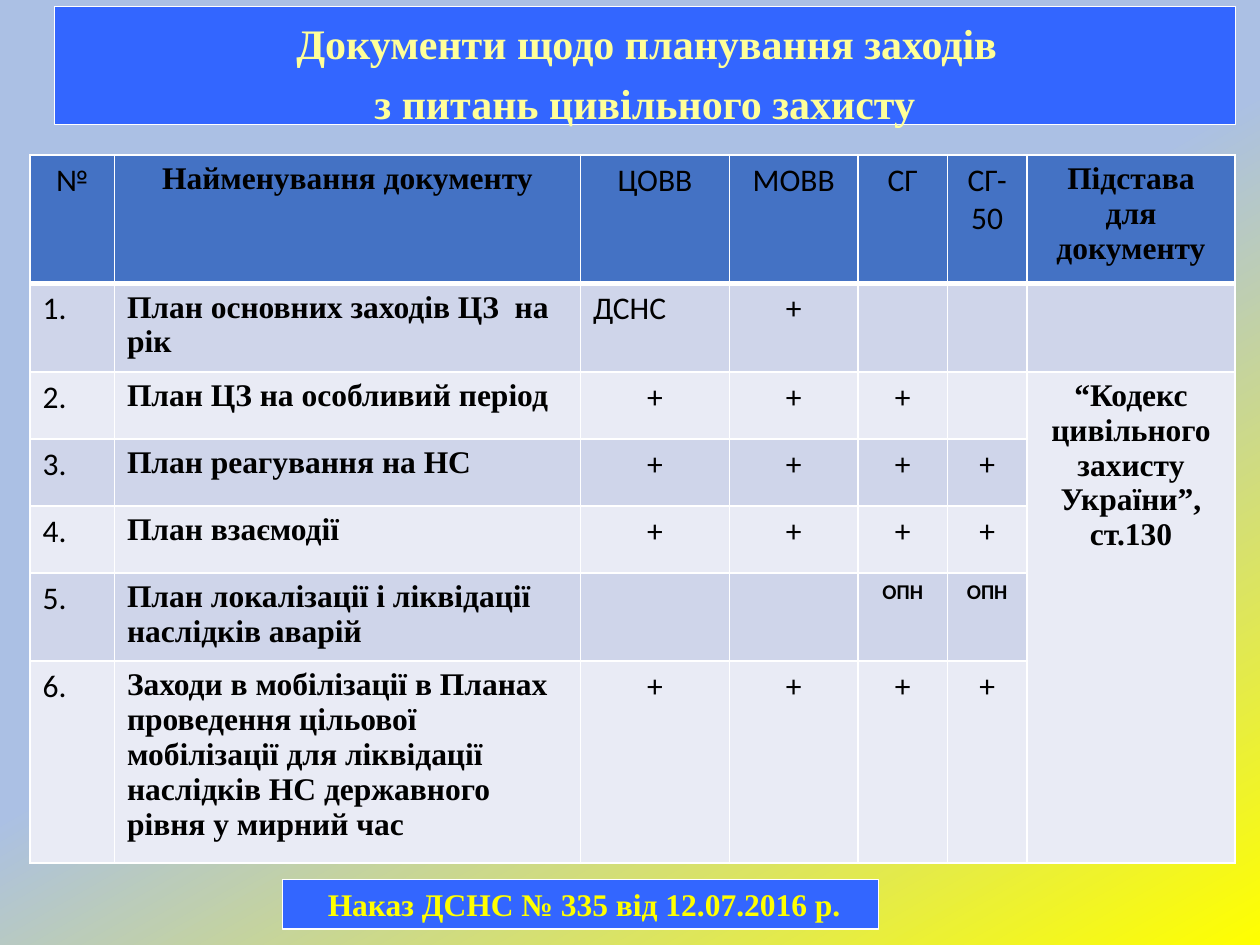
from copy import deepcopy
from dataclasses import dataclass

from lxml import etree
from pptx import Presentation
from pptx.dml.color import RGBColor
from pptx.enum import shapes, text
from pptx.oxml import ns
from pptx.util import Pt


@dataclass(frozen=True)
class Theme:
    sky: str = "ABC0E4"
    yellow: str = "FFFF00"
    banner: str = "3366FF"
    title: str = "FFFF99"
    white: str = "FFFFFF"
    black: str = "000000"
    header: str = "4472C4"
    bands: tuple = ("CFD5EA", "E9EBF5")
    serif: str = "Times New Roman"
    sans: str = "Calibri"
    title_size: int = 24
    title_lead: int = 32
    body: int = 18
    small: int = 12


THEME = Theme()
CENTER, LEFT = text.PP_ALIGN.CENTER, text.PP_ALIGN.LEFT


class Deck:
    def __init__(self, theme, width, height):
        self.theme = theme
        self.prs = Presentation()
        self.prs.slide_width, self.prs.slide_height = Pt(width), Pt(height)
        self.slide = self.prs.slides.add_slide(self.prs.slide_layouts[6])

    def background(self, stops, angle):
        """Fill the slide with a linear gradient; angle runs clockwise."""
        fill = self.slide.background.fill
        fill.gradient()
        fill.gradient_angle = 360 - angle
        stop_list = next(self.slide.element.iter(ns.qn("a:gsLst")))
        while len(stop_list) < len(stops):
            stop_list.append(deepcopy(stop_list[0]))
        for stop, (position, color) in zip(fill.gradient_stops, stops):
            stop.position = position
            stop.color.rgb = RGBColor.from_string(color)

    def run(self, paragraph, words, size, font, color, bold=False):
        run = paragraph.add_run()
        run.text = words
        formats = {"size": Pt(size), "name": font, "bold": bold}
        for name, value in formats.items():
            setattr(run.font, name, value)
        run.font.color.rgb = RGBColor.from_string(color)

    def banner(self, left, top, width, height, lines, space_before=0):
        """Draw a framed box; each line is a list of run arguments."""
        box = self.slide.shapes.add_shape(
            shapes.MSO_SHAPE.RECTANGLE, Pt(left), Pt(top), Pt(width), Pt(height))
        box.shadow.inherit = False
        box.fill.solid()
        box.fill.fore_color.rgb = RGBColor.from_string(self.theme.banner)
        box.line.color.rgb = RGBColor.from_string(self.theme.white)
        box.line.width = Pt(0.75)
        frame = box.text_frame
        frame.word_wrap = False
        frame.vertical_anchor = text.MSO_ANCHOR.MIDDLE
        for i, runs in enumerate(lines):
            paragraph = frame.add_paragraph() if i else frame.paragraphs[0]
            paragraph.alignment = CENTER
            paragraph.space_before = Pt(space_before)
            for run in runs:
                self.run(paragraph, *run)

    def cell(self, cell, words, fill, serif, align, size, bold, bottom):
        cell.fill.solid()
        cell.fill.fore_color.rgb = RGBColor.from_string(fill)
        self.borders(cell, {"lnL": 1, "lnR": 1, "lnT": 1, "lnB": bottom})
        font = self.theme.serif if serif else self.theme.sans
        for i, line in enumerate(words.split("\n") if words else []):
            frame = cell.text_frame
            paragraph = frame.add_paragraph() if i else frame.paragraphs[0]
            paragraph.alignment = align
            self.run(paragraph, line, size, font, self.theme.black, bold)

    def borders(self, cell, widths):
        properties = cell._tc.get_or_add_tcPr()
        for i, (edge, width) in enumerate(widths.items()):
            line = etree.Element(ns.qn(f"a:{edge}"), w=str(Pt(width)))
            fill = etree.SubElement(line, ns.qn("a:solidFill"))
            etree.SubElement(fill, ns.qn("a:srgbClr"), val=self.theme.white)
            properties.insert(i, line)

    def table(self, left, top, columns, heights, rows):
        """Add the plans table; its last column is merged from row 2 down."""
        table = self.slide.shapes.add_table(
            len(rows), len(columns), Pt(left), Pt(top),
            Pt(sum(columns)), Pt(sum(heights))).table
        for column, width in zip(table.columns, columns):
            column.width = Pt(width)
        for row, height in zip(table.rows, heights):
            row.height = Pt(height)
        last = len(columns) - 1
        for r, row in enumerate(rows):
            fill = self.theme.bands[(r - 1) % 2] if r else self.theme.header
            for c, words in enumerate(row):
                serif = c in (1, last)
                small = words == "ОПН"
                left_aligned = r and (c < 2 or words == "ДСНС")
                self.cell(table.cell(r, c), words, fill, serif,
                          LEFT if left_aligned else CENTER,
                          self.theme.small if small else self.theme.body,
                          serif or small, 1 if r else 3)
        table.cell(2, last).merge(table.cell(len(rows) - 1, last))


ROWS = [
    ("№", "Найменування документу", "ЦОВВ", "МОВВ", "СГ", "СГ-50",
     "Підстава для документу"),
    ("1.", "План основних заходів ЦЗ  на рік", "ДСНС", "+", "", "", ""),
    ("2.", "План ЦЗ на особливий період", "+", "+", "+", "",
     "“Кодекс цивільного захисту України”,\nст.130"),
    ("3.", "План реагування на НС", "+", "+", "+", "+", ""),
    ("4.", "План взаємодії", "+", "+", "+", "+", ""),
    ("5.", "План локалізації і ліквідації наслідків аварій",
     "", "", "ОПН", "ОПН", ""),
    ("6.", "Заходи в мобілізації в Планах проведення цільової мобілізації "
           "для ліквідації наслідків НС державного рівня у мирний час",
     "+", "+", "+", "+", ""),
]


def main():
    t = THEME
    deck = Deck(t, 720, 540)
    deck.background([(0, t.sky), (0.49, t.sky), (1, t.yellow)], angle=60)
    title = (t.title_size, t.serif, t.title, True)
    deck.banner(31, 3.8, 675, 67.5, [
        [(" ", t.title_lead, t.serif, t.white),
         ("Документи щодо планування заходів ", *title)],
        [("з питань цивільного захисту", *title)],
    ], space_before=4)
    deck.table(17.2, 88.6, [48.2, 266.4, 85, 73.6, 51.1, 45.4, 119],
               [73.5, 50.4, 38.3, 38.3, 38.3, 50.4, 115.4], ROWS)
    deck.banner(161.4, 502.6, 340.5, 28.3, [
        [(" ", t.body, t.serif, t.white),
         ("Наказ ДСНС № 335 від 12.07.2016 р.",
          t.body, t.serif, t.yellow, True)],
    ])
    deck.prs.save("out.pptx")


if __name__ == "__main__":
    main()
